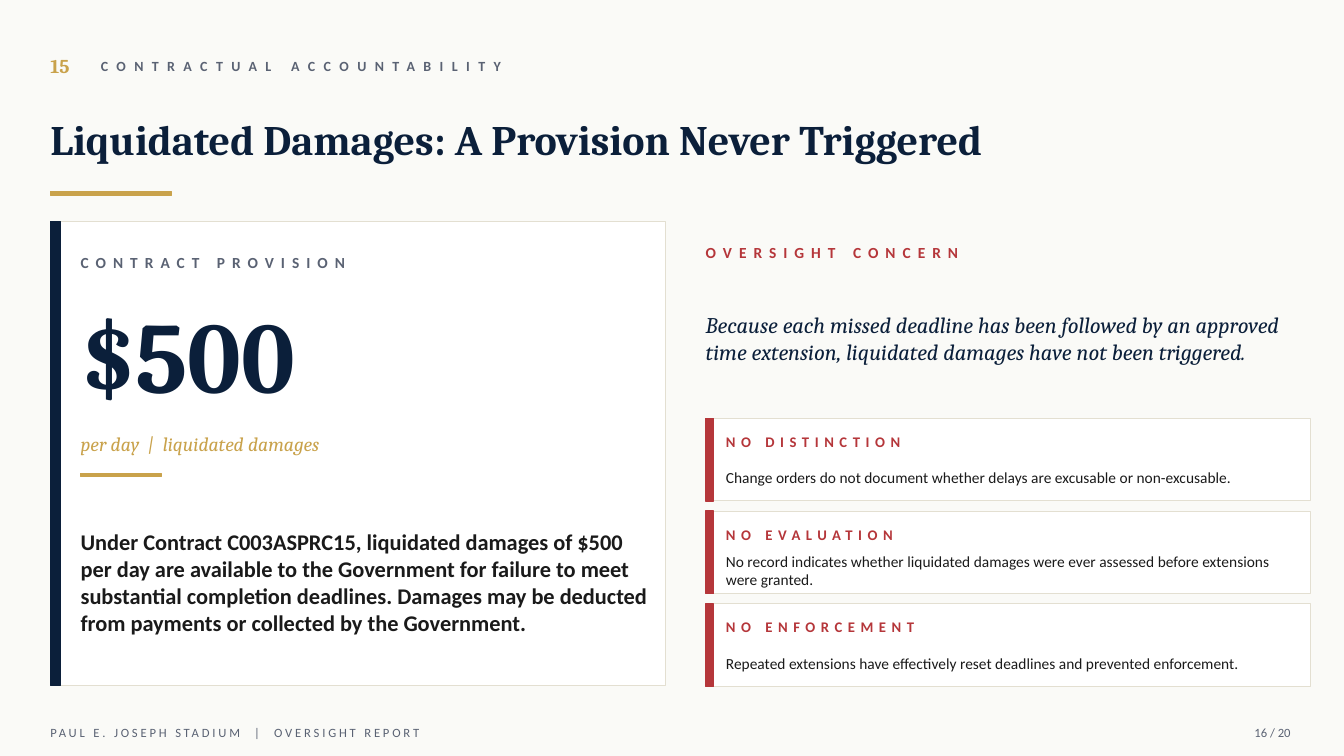
import pptx
import pptx.dml.color
import pptx.enum.shapes
import pptx.enum.text
import pptx.util

PX = 9144  # 100 px to the inch
COLORS = {
    "paper": "FAFAF7", "white": "FFFFFF", "border": "E3DFD1", "navy": "0B1F3A",
    "gold": "C9A24B", "red": "B5363A", "slate": "5A6273", "ink": "1A1A1A",
}
FINDINGS = [
    ("NO DISTINCTION",
     "Change orders do not document whether delays are excusable or non-excusable."),
    ("NO EVALUATION",
     "No record indicates whether liquidated damages were ever assessed before "
     "extensions were granted."),
    ("NO ENFORCEMENT",
     "Repeated extensions have effectively reset deadlines and prevented enforcement."),
]


def rgb(name):
    return pptx.dml.color.RGBColor.from_string(COLORS[name])


def add_rect(page, box, fill, line=None, line_width=1):
    """Add a rectangle, outlined in its own fill unless a line colour is given."""
    shape = page.shapes.add_shape(
        pptx.enum.shapes.MSO_SHAPE.RECTANGLE, *(side * PX for side in box))
    shape.shadow.inherit = False
    shape.fill.solid()
    shape.fill.fore_color.rgb = rgb(fill)
    shape.line.color.rgb = rgb(line or fill)
    shape.line.width = pptx.util.Pt(line_width)


def add_text(page, box, text, size, color, font="Calibri", bold=False,
             italic=False, spacing=0, align="LEFT"):
    """Add a one-paragraph text box; spacing is letter spacing in points."""
    frame = page.shapes.add_textbox(*(side * PX for side in box)).text_frame
    frame.word_wrap = True
    frame.margin_left = frame.margin_right = frame.margin_top = frame.margin_bottom = 0
    frame.vertical_anchor = pptx.enum.text.MSO_ANCHOR.MIDDLE
    frame.text = text
    para = frame.paragraphs[0]
    para.alignment = pptx.enum.text.PP_ALIGN[align]
    span = para.runs[0]
    span.font.name = font
    span.font.size = pptx.util.Pt(size)
    span.font.bold = bold
    span.font.italic = italic
    span.font.color.rgb = rgb(color)
    if spacing:
        span.font._element.set("spc", str(spacing * 100))


def add_card(page, box, accent, accent_width):
    """Add a white bordered panel with a coloured bar down its left edge."""
    left, top, _, height = box
    add_rect(page, box, "white", "border", 0.75)
    add_rect(page, (left, top, accent_width, height), accent)


def add_header(page, box):
    left, top, width, _ = box
    add_text(page, (left, top, 60, 40), "15", 14, "gold", "Cambria", bold=True)
    add_text(page, (left + 50, top + 5, 600, 30), "CONTRACTUAL ACCOUNTABILITY",
             10, "slate", bold=True, spacing=6)
    add_text(page, (left, top + 50, width, 85),
             "Liquidated Damages: A Provision Never Triggered",
             30, "navy", "Cambria", bold=True)
    add_rect(page, (left, top + 145, 120, 4), "gold")


def add_provision(page, box):
    left, top, width, _ = box
    inner, inner_width = left + 30, width - 40
    add_card(page, box, "navy", 10)
    add_text(page, (inner, top + 20, inner_width, 40), "CONTRACT PROVISION",
             11, "slate", bold=True, spacing=5)
    add_text(page, (inner, top + 65, inner_width, 130), "$500",
             72, "navy", "Cambria", bold=True)
    add_text(page, (inner, top + 200, inner_width, 40),
             "per day  |  liquidated damages", 14, "gold", "Cambria", italic=True)
    add_rect(page, (inner, top + 250, 80, 3), "gold")
    add_text(page, (inner, top + 265, inner_width, 185),
             "Under Contract C003ASPRC15, liquidated damages of $500 per day are "
             "available to the Government for failure to meet substantial completion "
             "deadlines. Damages may be deducted from payments or collected by the "
             "Government.", 16, "ink", bold=True)


def add_finding(page, box, heading, detail):
    left, top, width, _ = box
    add_card(page, box, "red", 8)
    add_text(page, (left + 20, top + 8, width - 30, 30), heading,
             10.5, "red", bold=True, spacing=4)
    add_text(page, (left + 20, top + 38, width - 30, 42), detail, 11, "ink")


def add_concern(page, box):
    left, top, width, height = box
    add_text(page, (left, top, width, 40), "OVERSIGHT CONCERN",
             11, "red", bold=True, spacing=5)
    add_text(page, (left, top + 45, width, 120),
             "Because each missed deadline has been followed by an approved time "
             "extension, liquidated damages have not been triggered.",
             16, "navy", "Cambria", italic=True)
    first, gap = top + 185, 10
    card_height = (top + height - first - gap * (len(FINDINGS) - 1)) // len(FINDINGS)
    for row, (heading, detail) in enumerate(FINDINGS):
        card_top = first + row * (card_height + gap)
        add_finding(page, (left, card_top, width, card_height), heading, detail)


def add_footer(page, box):
    left, top, width, height = box
    add_text(page, (left, top, 800, height),
             "PAUL E. JOSEPH STADIUM  |  OVERSIGHT REPORT", 9, "slate", spacing=2)
    add_text(page, (left + width - 100, top, 100, height), "16 / 20",
             9, "slate", align="RIGHT")


def main():
    deck = pptx.Presentation()
    deck.slide_width, deck.slide_height = 1333 * PX, 750 * PX
    page = deck.slides.add_slide(deck.slide_layouts[6])
    page.background.fill.solid()
    page.background.fill.fore_color.rgb = rgb("paper")
    add_header(page, (50, 45, 1230, 149))
    add_provision(page, (50, 220, 610, 460))
    add_concern(page, (700, 230, 600, 451))
    add_footer(page, (50, 712, 1230, 30))
    deck.save("out.pptx")


if __name__ == "__main__":
    main()
